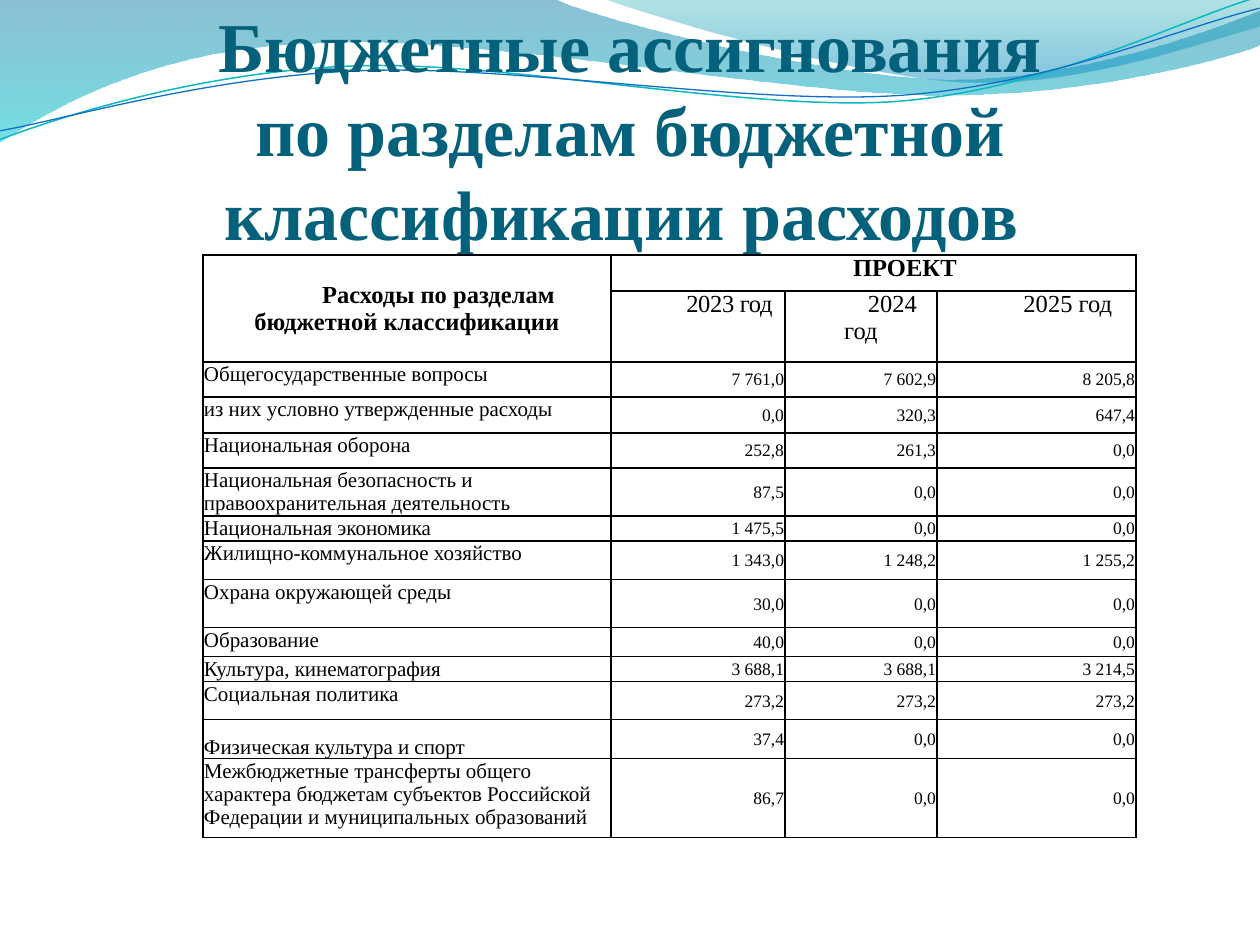
from lxml.etree import SubElement
from pptx import Presentation
from pptx.dml.color import RGBColor as Rgb
from pptx.enum.text import MSO_ANCHOR as Anchor, MSO_AUTO_SIZE as AutoSize, PP_ALIGN as Align
from pptx.oxml.ns import qn
from pptx.util import Pt

PX = 914400 / 126
FONT = "Times New Roman"
COLORS = {
    "title": "04617B", "text": "000000", "border": "000000",
    "deep_blue": "0074A1", "cyan": "00C6CF", "teal": "00A1A9", "blue": "008BBF",
    "teal_line": "0AB8BF", "blue_line": "0F6FC6",
}

BANDS = [
    ([(-1, -1), (554, -1), (600, 21, 837, 79, 955, 79), (1074, 79, 1207, 33, 1260, 11),
      (1261, 45), (1239, 55, 1096, 96, 940, 95), (784, 95, 481, 35, 324, 43),
      (163, 45, 58, 105, -1, 142), (-1, -1)],
     [("deep_blue", 0, 45), ("cyan", 1, 55)]),
    ([(604, -1), (641, 14, 859, 78, 969, 82), (1079, 86, 1211, 40, 1260, 26),
      (1260, 0), (604, -1)],
     [("teal", 0, 30), ("blue", 0.8, 45)]),
]
CURVE_ROTATION = 357.3
CURVES = [
    ([(-3, 110), (58, 90, 199, 52, 350, 53), (499, 53, 745, 118, 896, 114),
      (1049, 109, 1184, 45, 1260, 27)], "teal_line", 0.85),
    ([(-2, 101), (57, 94, 207, 57, 357, 58), (509, 58, 750, 112, 902, 108),
      (1052, 104, 1186, 52, 1262, 38)], "blue_line", 0.75),
]

TITLE = "Бюджетные ассигнования\vпо разделам бюджетной классификации расходов "
COLUMNS = [408, 174, 152, 199]
HEADER_HEIGHTS = [36, 71]
YEARS = [("2023 год", -20), ("2024 год", 0), ("2025 год", 0)]
EXPENSES = [
    (35, "Общегосударственные вопросы", "7 761,0", "7 602,9", "8 205,8"),
    (36, "из них условно утвержденные расходы", "0,0", "320,3", "647,4"),
    (35, "Национальная оборона", "252,8", "261,3", "0,0"),
    (48, "Национальная безопасность и правоохранительная деятельность", "87,5", "0,0", "0,0"),
    (25, "Национальная экономика", "1 475,5", "0,0", "0,0"),
    (39, "Жилищно-коммунальное хозяйство", "1 343,0", "1 248,2", "1 255,2"),
    (48, "Охрана окружающей среды", "30,0", "0,0", "0,0"),
    (29, "Образование", "40,0", "0,0", "0,0"),
    (25, "Культура, кинематография", "3 688,1", "3 688,1", "3 214,5"),
    (38, "Социальная политика", "273,2", "273,2", "273,2"),
    (39, "Физическая культура и спорт", "37,4", "0,0", "0,0"),
    (79, "Межбюджетные трансферты общего характера бюджетам субъектов Российской "
         "Федерации и муниципальных образований", "86,7", "0,0", "0,0"),
]


def px(length):
    return round(length * PX)


def color(name):
    return Rgb.from_string(COLORS[name])


def set_all(target, values):
    for name, value in values.items():
        setattr(target, name, value)


def add_outline(page, left, top, steps, close):
    anchors = [(left + step[-2], top + step[-1]) for step in steps]
    builder = page.shapes.build_freeform(*anchors[0], scale=PX)
    builder.add_line_segments(anchors[1:], close=close)
    shape = builder.convert_to_shape()
    shape.shadow.inherit = False
    min_x = min(step[-2] for step in steps)
    min_y = min(step[-1] for step in steps)
    segments = list(shape._element.spPr.iter(qn("a:lnTo")))
    for segment, step in zip(segments, steps[1:]):
        if len(step) == 6:
            bend = segment.makeelement(qn("a:cubicBezTo"))
            for x, y in zip(step[::2], step[1::2]):
                SubElement(bend, qn("a:pt"), x=str(x - min_x), y=str(y - min_y))
            segment.getparent().replace(segment, bend)
    return shape


def add_waves(page, left, top):
    for steps, stops in BANDS:
        band = add_outline(page, left, top, steps, True)
        band.line.fill.background()
        band.fill.gradient()
        band.fill.gradient_angle = 270
        for stop, (name, position, opacity) in zip(band.fill.gradient_stops, stops):
            stop.position = position
            stop.color.rgb = color(name)
        tints = band._element.spPr.iter(qn("a:srgbClr"))
        for tint, (name, position, opacity) in zip(tints, stops):
            SubElement(tint, qn("a:alpha"), val=str(opacity * 1000))
    for steps, name, width in CURVES:
        curve = add_outline(page, left, top, steps, False)
        curve.rotation = CURVE_ROTATION
        curve.fill.background()
        curve.line.color.rgb = color(name)
        curve.line.width = Pt(width)


def write(frame, text, size, align, ink="text", bold=False):
    frame.text = text
    para = frame.paragraphs[0]
    para.alignment = align
    for span in para.runs:
        set_all(span.font, {"name": FONT, "size": Pt(size), "bold": bold})
        span.font.color.rgb = color(ink)
    return para


def place_title(page, left, top, width, height):
    box = page.shapes.title
    set_all(box, {"left": px(left), "top": px(top), "width": px(width), "height": px(height)})
    frame = box.text_frame
    write(frame, TITLE, 40, Align.CENTER, "title", True)
    set_all(frame, {"word_wrap": True, "auto_size": AutoSize.NONE,
                    "vertical_anchor": Anchor.BOTTOM, "margin_left": 0, "margin_right": 0,
                    "margin_top": px(6), "margin_bottom": 0})
    page.shapes._spTree.append(box._element)


def style_cell(cell):
    properties = cell._tc.get_or_add_tcPr()
    for side in ("a:lnL", "a:lnR", "a:lnT", "a:lnB"):
        edge = SubElement(properties, qn(side), w=str(Pt(1)))
        SubElement(SubElement(edge, qn("a:solidFill")), qn("a:srgbClr"), val=COLORS["border"])
    cell.fill.background()


def fill_header(cell, text, bold=False, anchor=Anchor.TOP, spacing=0):
    para = write(cell.text_frame, text, 14, Align.CENTER, bold=bold)
    para._p.get_or_add_pPr().set("indent", str(px(63)))
    para.runs[0].font._element.set("spc", str(spacing))
    set_all(cell, {"vertical_anchor": anchor, "margin_left": px(9), "margin_right": px(9),
                   "margin_top": 0, "margin_bottom": 0})


def fill_body(cell, text, size, align, anchor):
    write(cell.text_frame, text, size, align)
    set_all(cell, {"vertical_anchor": anchor, "margin_left": px(1), "margin_right": px(1),
                   "margin_top": px(1), "margin_bottom": 0})


def add_expenses(page, left, top):
    heights = HEADER_HEIGHTS + [row[0] for row in EXPENSES]
    table = page.shapes.add_table(len(heights), len(COLUMNS), px(left), px(top),
                                  px(sum(COLUMNS)), px(sum(heights))).table
    set_all(table, {"first_row": False, "horz_banding": False})
    for column, width in zip(table.columns, COLUMNS):
        column.width = px(width)
    for row, height in zip(table.rows, heights):
        row.height = px(height)
    for cell in table.iter_cells():
        style_cell(cell)
    table.cell(0, 0).merge(table.cell(1, 0))
    table.cell(0, 1).merge(table.cell(0, 3))
    fill_header(table.cell(0, 0), "Расходы по разделам бюджетной классификации", True, Anchor.MIDDLE)
    fill_header(table.cell(0, 1), "ПРОЕКТ", True)
    for index, (year, spacing) in enumerate(YEARS, 1):
        fill_header(table.cell(1, index), year, spacing=spacing)
    for index, (height, section, *amounts) in enumerate(EXPENSES, len(HEADER_HEIGHTS)):
        anchor = Anchor.BOTTOM if section.startswith("Физическая") else Anchor.TOP
        fill_body(table.cell(index, 0), section, 12, Align.LEFT, anchor)
        for column, amount in enumerate(amounts, 1):
            fill_body(table.cell(index, column), amount, 10, Align.RIGHT, Anchor.MIDDLE)


def main():
    deck = Presentation()
    set_all(deck, {"slide_width": px(1260), "slide_height": px(945)})
    page = deck.slides.add_slide(deck.slide_layouts[5])
    add_waves(page, 0, 0)
    place_title(page, 63, 97, 1134, 158)
    add_expenses(page, 203, 255)
    deck.save("out.pptx")


if __name__ == "__main__":
    main()
